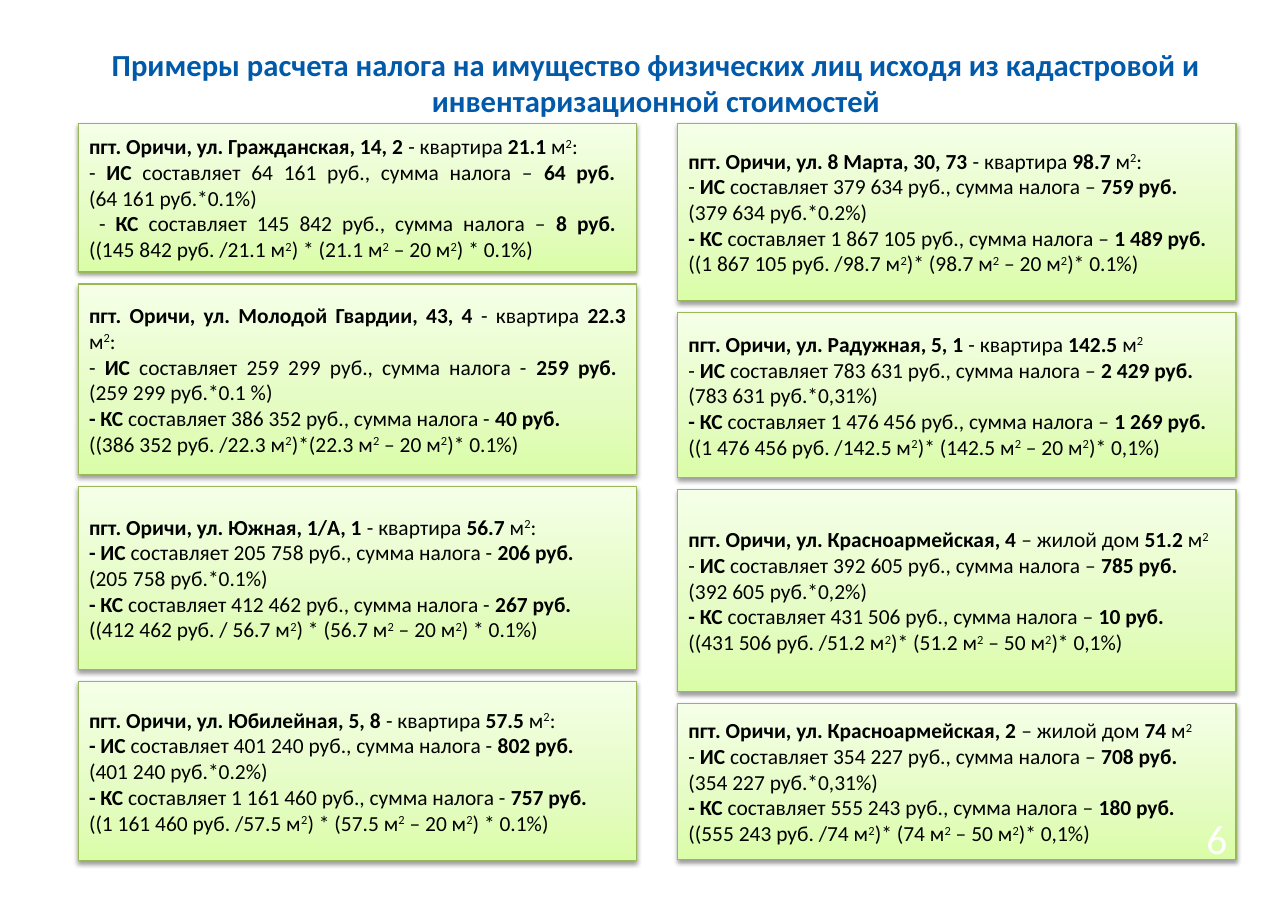
import copy
from dataclasses import dataclass

import pptx
import pptx.dml.color
import pptx.enum.shapes
import pptx.enum.text
import pptx.oxml
import pptx.oxml.ns
import pptx.util

Pt = pptx.util.Pt
RGB = pptx.dml.color.RGBColor.from_string
Align = pptx.enum.text.PP_ALIGN
Anchor = pptx.enum.text.MSO_ANCHOR


@dataclass(frozen=True)
class Theme:
    font: str = "Calibri"
    title: str = "005AA9"
    text: str = "000000"
    page: str = "FFFFFF"
    edge: str = "98B955"
    fade: tuple = ((0, "DAFDA7"), (0.35, "E4FCC2"), (1, "F5FFE7"))
    head: int = 20
    body: int = 14
    num: int = 27


THEME = Theme()
TOP, WIDTH, GAP = 80.6, 365, 7.8

TITLE = ("Примеры расчета налога на имущество физических лиц исходя "
         "из кадастровой и инвентаризационной стоимостей")

LEFT = (
    (97.2, (
        "|пгт. Оричи, ул. Гражданская, 14, 2 |- квартира |21.1| м²:",
        "- |ИС| составляет 64 161 руб., сумма налога – |64 руб. |\n(64 161 руб.*0.1%)",
        " - |КС |составляет 145 842 руб., сумма налога – |8 руб. |\n"
        "((145 842 руб. /21.1 м²) * (21.1 м² – 20 м²) * 0.1%)")),
    (124.6, (
        "|пгт. Оричи, ул. Молодой Гвардии, 43, 4 |- квартира |22.3| м²:",
        "- |ИС| составляет 259 299 руб., сумма налога - |259 руб. |\n(259 299 руб.*0.1 %)",
        "|- КС |составляет 386 352 руб., сумма налога - |40 руб. ",
        "((386 352 руб. /22.3 м²)*(22.3 м² – 20 м²)* 0.1%)")),
    (119.5, (
        "|пгт. Оричи, ул. Южная, 1/А, 1| - квартира |56.7| м²:",
        "|- ИС| составляет 205 758 руб., сумма налога - |206 руб. ",
        "(205 758 руб.*0.1%)",
        "|- КС |составляет 412 462 руб., сумма налога - |267 руб. ",
        "((412 462 руб. / 56.7 м²) * (56.7 м² – 20 м²) * 0.1%)")),
    (117.4, (
        "|пгт. Оричи, ул. Юбилейная, 5, 8 |- квартира |57.5| м²:",
        "|- ИС| составляет 401 240 руб., сумма налога - |802 руб. ",
        "(401 240 руб.*0.2%)",
        "|- КС |составляет 1 161 460 руб., сумма налога - |757 руб. ",
        "((1 161 460 руб. /57.5 м²) * (57.5 м² – 20 м²) * 0.1%)")),
)

RIGHT = (
    (115.9, (
        "|пгт. Оричи, ул. 8 Марта, 30, 73 |- квартира |98.7| м²:",
        "- |ИС| составляет 379 634 руб., сумма налога – |759 руб.|\n(379 634 руб.*0.2%)",
        "|- КС |составляет 1 867 105 руб., сумма налога – |1 489 руб.",
        "((1 867 105 руб. /98.7 м²)* (98.7 м² – 20 м²)* 0.1%)")),
    (108, (
        "|пгт. Оричи, ул. Радужная, 5, 1| - квартира |142.5 |м²",
        "- |ИС| составляет 783 631 руб., сумма налога – |2 429 руб. |\n(783 631 руб.*0,31%)",
        "|- КС |составляет 1 476 456 руб., сумма налога – |1 269 руб.",
        "((1 476 456 руб. /142.5 м²)* (142.5 м² – 20 м²)* 0,1%)")),
    (131.8, (
        "|пгт. Оричи, ул. Красноармейская, 4| – жилой дом |51.2 |м²",
        "- |ИС| составляет 392 605 руб., сумма налога – |785 руб. |\n(392 605 руб.*0,2%)",
        "|- КС| составляет 431 506 руб., сумма налога – |10 руб.",
        "((431 506 руб. /51.2 м²)* (51.2 м² – 50 м²)* 0,1%)")),
    (102.2, (
        "|пгт. Оричи, ул. Красноармейская, 2| – жилой дом |74 |м²",
        "- |ИС| составляет 354 227 руб., сумма налога – |708 руб. |\n(354 227 руб.*0,31%)",
        "|- КС| составляет 555 243 руб., сумма налога – |180 руб.",
        "((555 243 руб. /74 м²)* (74 м² – 50 м²)* 0,1%)")),
)


def style(para, size, color, align, bold=None):
    para.alignment = align
    font = para.font
    font.name, font.size, font.bold = THEME.font, Pt(size), bold
    font.color.rgb = RGB(color)


def place(shape, left, top, width, height):
    shape.left, shape.top = Pt(left), Pt(top)
    shape.width, shape.height = Pt(width), Pt(height)


def frame(shape, side=7.2, edge=3.6):
    box = shape.text_frame
    box.word_wrap = True
    box.auto_size = pptx.enum.text.MSO_AUTO_SIZE.NONE
    box.vertical_anchor = Anchor.MIDDLE
    box.margin_left = box.margin_right = Pt(side)
    box.margin_top = box.margin_bottom = Pt(edge)
    return box


def add_run(para, text, bold, power=False):
    run = para.add_run()
    run.text = text
    run.font.bold = bold
    if power:
        run.font._element.set("baseline", "30000")


def write(para, line):
    for num, part in enumerate(line.split("|")):
        if part.startswith("\n"):
            para.add_line_break()
            part = part[1:]
        for spot, text in enumerate(part.split("²")):
            if spot:
                add_run(para, "2", False, True)
            if text:
                add_run(para, text, num % 2 == 1)


def shade(shape):
    fill = shape.fill
    fill.gradient()
    first = shape._element.spPr.find(".//" + pptx.oxml.ns.qn("a:gs"))
    first.addnext(copy.deepcopy(first))
    for stop, (pos, color) in zip(fill.gradient_stops, THEME.fade):
        stop.position = pos
        stop.color.rgb = RGB(color)
    fill.gradient_angle = 90
    shape.line.color.rgb = RGB(THEME.edge)
    shape.line.width = Pt(0.75)
    shape.shadow.inherit = False
    glow = pptx.oxml.parse_xml(
        f'<a:outerShdw {pptx.oxml.ns.nsdecls("a")} blurRad="{Pt(3.1)}" '
        f'dist="{Pt(1.6)}" dir="5400000" rotWithShape="0">'
        '<a:srgbClr val="000000"><a:alpha val="38000"/></a:srgbClr></a:outerShdw>')
    shape._element.spPr.find(pptx.oxml.ns.qn("a:effectLst")).append(glow)


def add_card(slide, left, top, height, lines, second):
    kind = pptx.enum.shapes.MSO_SHAPE.RECTANGLE
    card = slide.shapes.add_shape(kind, Pt(left), Pt(top), Pt(WIDTH), Pt(height))
    shade(card)
    box = frame(card)
    for num, line in enumerate(lines):
        para = box.add_paragraph() if num else box.paragraphs[0]
        style(para, THEME.body, THEME.text, second if num == 1 else Align.JUSTIFY)
        write(para, line)


def add_stack(slide, left, cards, second):
    top = TOP
    for height, lines in cards:
        add_card(slide, left, top, height, lines, second)
        top += height + GAP


def add_title(slide):
    title = slide.shapes.title
    place(title, 37.4, 31, 782.6, 45.4)
    box = frame(title, 8, 4)
    box.text = TITLE
    style(box.paragraphs[0], THEME.head, THEME.title, Align.CENTER, True)


def add_page(slide):
    page = slide.shapes.add_textbox(Pt(766.8), Pt(524.2), Pt(56.9), Pt(54.7))
    box = frame(page, 8, 4)
    box.text = "6"
    para = box.paragraphs[0]
    style(para, THEME.num, THEME.page, Align.CENTER)
    para.line_spacing = Pt(24)


def main():
    deck = pptx.Presentation()
    deck.slide_width, deck.slide_height = Pt(841.7), Pt(595.4)
    slide = deck.slides.add_slide(deck.slide_layouts[5])
    add_title(slide)
    add_stack(slide, 51.1, LEFT, Align.JUSTIFY)
    add_stack(slide, 442.8, RIGHT, Align.LEFT)
    add_page(slide)
    deck.save("out.pptx")


if __name__ == "__main__":
    main()
